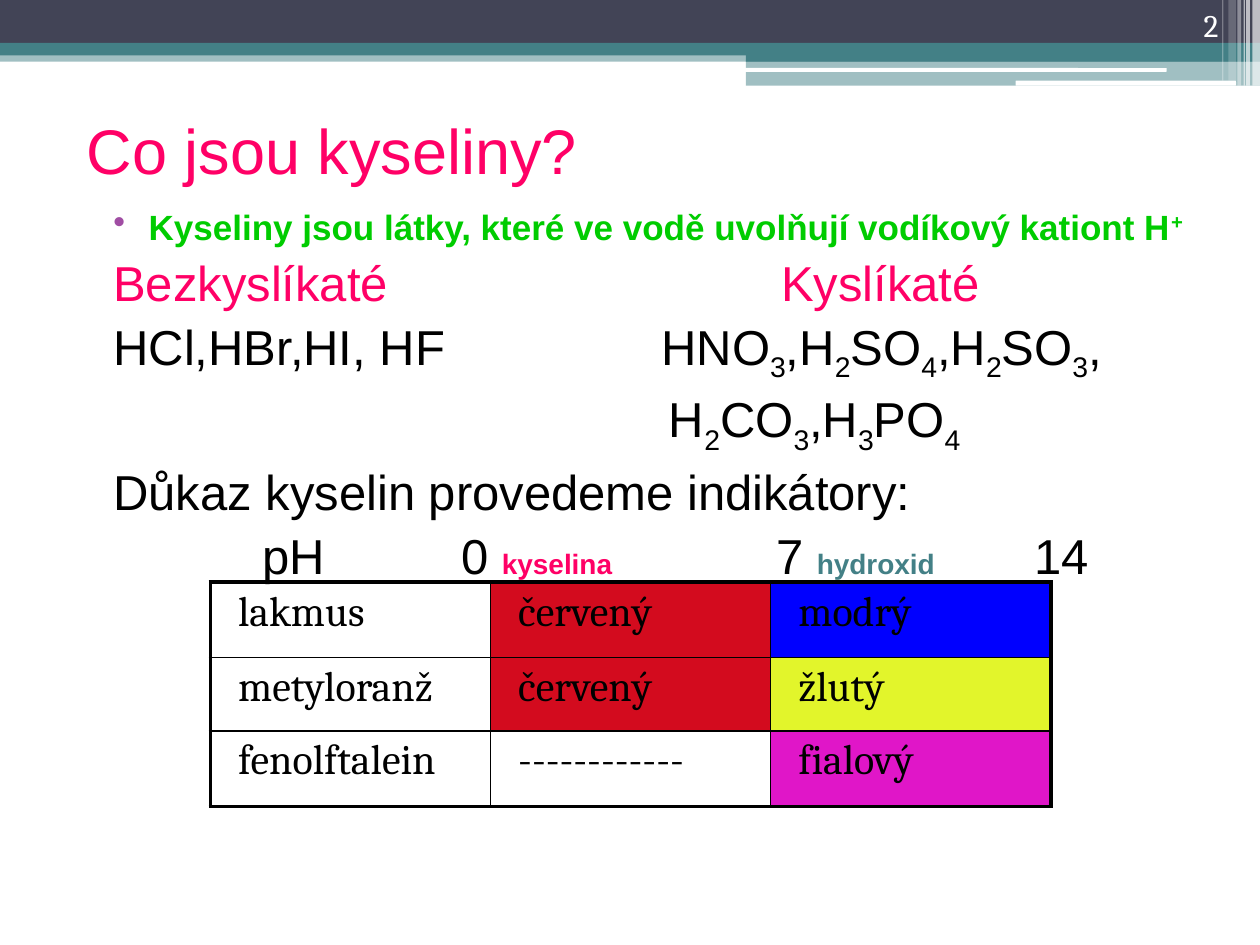
from dataclasses import dataclass
from itertools import groupby

from lxml.etree import SubElement
from pptx import Presentation
from pptx.dml.color import RGBColor
from pptx.enum.shapes import MSO_SHAPE
from pptx.enum.text import MSO_ANCHOR, PP_ALIGN
from pptx.oxml.ns import qn
from pptx.util import Inches, Pt

WHITE, BLACK = "FFFFFF", "000000"
NAVY, TEAL, PINK, GREEN, PURPLE = "424456", "438086", "FF0066", "00CC00", "A04DA3"
RED, BLUE, YELLOW, MAGENTA = "D30B1E", "0000FF", "E2F52B", "E016C8"


@dataclass
class Bar:
    left: float
    top: float
    width: float
    height: float
    color: str
    opacity: int = 100
    rounded: bool = False


@dataclass
class Cell:
    text: str
    fill: str | None = None


BARS = [
    Bar(0, 0.4, 10, 0.09, TEAL, 50),
    Bar(0, 0, 10, 0.34, NAVY),
    Bar(0, 0.34, 10, 0.1, TEAL),
    Bar(5.92, 0.39, 4.08, 0.1, TEAL),
    Bar(5.92, 0.48, 4.08, 0.2, TEAL, 50),
    Bar(5.91, 0.54, 3.35, 0.03, WHITE, rounded=True),
    Bar(8.06, 0.64, 1.75, 0.04, WHITE, rounded=True),
    Bar(9.94, 0, 0.06, 0.68, WHITE, 65),
    Bar(9.89, 0, 0.03, 0.68, WHITE, 65),
    Bar(9.87, 0, 0.01, 0.68, WHITE, 60),
    Bar(9.82, 0, 0.03, 0.68, WHITE, 40),
    Bar(9.75, 0, 0.06, 0.64, WHITE, 20),
    Bar(9.7, 0, 0.01, 0.64, WHITE, 30),
]
INDICATORS = [
    [Cell("lakmus"), Cell("červený", RED), Cell("modrý", BLUE)],
    [Cell("metyloranž"), Cell("červený", RED), Cell("žlutý", YELLOW)],
    [Cell("fenolftalein"), Cell("------------"), Cell("fialový", MAGENTA)],
]
ROW_HEIGHTS = [0.6, 0.58, 0.6]
COLUMN_WIDTH = 6.67 / 3


def rgb(color: str) -> RGBColor:
    return RGBColor.from_string(color)


def add_bar(s, bar: Bar) -> None:
    kind = MSO_SHAPE.ROUNDED_RECTANGLE if bar.rounded else MSO_SHAPE.RECTANGLE
    sp = s.shapes.add_shape(kind, *map(Inches, (bar.left, bar.top, bar.width, bar.height)))
    sp.shadow.inherit = False
    sp.line.fill.background()
    sp.fill.solid()
    sp.fill.fore_color.rgb = rgb(bar.color)
    if bar.opacity < 100:
        clr = next(sp.fill._xPr.iter(qn("a:srgbClr")))
        SubElement(clr, qn("a:alpha"), val=str(bar.opacity * 1000))


def add_box(s, left: float, top: float, width: float, height: float, anchor=MSO_ANCHOR.TOP):
    tf = s.shapes.add_textbox(*map(Inches, (left, top, width, height))).text_frame
    tf.word_wrap = True
    tf.vertical_anchor = anchor
    return tf


def add_run(p, text: str, *, size: float = 28, color: str = BLACK, font: str = "Arial",
            bold: bool = False, baseline: int = 0) -> None:
    r = p.add_run()
    r.text = text
    r.font.size = Pt(size)
    r.font.name = font
    r.font.bold = bold
    r.font.color.rgb = rgb(color)
    if baseline:
        r.font._element.set("baseline", str(baseline * 1000))


def add_formulas(p, text: str) -> None:
    """Write chemical formulas with their digits as subscripts."""
    for is_digit, chars in groupby(text, str.isdigit):
        add_run(p, "".join(chars), baseline=-25 if is_digit else 0)


def add_line(tf, *tabs: float):
    """Add a body paragraph with left tab stops in inches."""
    p = tf.add_paragraph()
    p.space_before = Pt(3)
    if tabs:
        stops = SubElement(p._p.get_or_add_pPr(), qn("a:tabLst"))
        for tab in tabs:
            SubElement(stops, qn("a:tab"), pos=str(Inches(tab)), algn="l")
    return p


def add_bullet(p, char: str, color: str, indent: float) -> None:
    pPr = p._p.get_or_add_pPr()
    pPr.set("marL", str(Inches(indent)))
    pPr.set("indent", str(-Inches(indent)))
    SubElement(SubElement(pPr, qn("a:buClr")), qn("a:srgbClr"), val=color)
    SubElement(pPr, qn("a:buChar"), char=char)


def set_borders(cell, widths: dict[str, float]) -> None:
    tcPr = cell._tc.get_or_add_tcPr()
    for i, (side, width) in enumerate(widths.items()):
        ln = tcPr.makeelement(qn(f"a:ln{side}"), {"w": str(Pt(width))})
        SubElement(SubElement(ln, qn("a:solidFill")), qn("a:srgbClr"), val=BLACK)
        tcPr.insert(i, ln)


def add_indicator_table(s) -> None:
    rows, cols = len(INDICATORS), len(INDICATORS[0])
    table = s.shapes.add_table(rows, cols, Inches(1.67), Inches(4.62),
                               Inches(COLUMN_WIDTH * cols), Inches(sum(ROW_HEIGHTS))).table
    table.first_row = table.horz_banding = False
    for column in table.columns:
        column.width = Inches(COLUMN_WIDTH)
    for i, items in enumerate(INDICATORS):
        table.rows[i].height = Inches(ROW_HEIGHTS[i])
        for j, item in enumerate(items):
            cell = table.cell(i, j)
            cell.margin_left = Inches(0.22)
            if item.fill:
                cell.fill.solid()
                cell.fill.fore_color.rgb = rgb(item.fill)
            else:
                cell.fill.background()
            add_run(cell.text_frame.paragraphs[0], item.text, size=24, font="Cambria")
            on_edge = {"L": j == 0, "R": j == cols - 1, "T": i == 0, "B": i == rows - 1}
            set_borders(cell, {side: 2.25 if edge else 1 for side, edge in on_edge.items()})


def add_body(s) -> None:
    tf = add_box(s, 0.7, 1.55, 9, 5.06)
    tf.margin_left = Inches(0.2)
    tf.margin_top = Inches(0.08)

    p = tf.paragraphs[0]
    add_bullet(p, "•", PURPLE, 0.28)
    definition = dict(size=20, color=GREEN, bold=True)
    add_run(p, "Kyseliny jsou látky, které ve vodě uvolňují vodíkový kationt H", **definition)
    add_run(p, "+", baseline=30, **definition)

    add_run(add_line(tf, 5.3), "Bezkyslíkaté\tKyslíkaté", color=PINK)
    add_formulas(add_line(tf, 4.35), "HCl,HBr,HI, HF\tHNO3,H2SO4,H2SO3,")
    add_formulas(add_line(tf, 4.41), "\tH2CO3,H3PO4")
    add_run(add_line(tf), "Důkaz kyselin provedeme indikátory:")

    p = add_line(tf, 1.18, 2.76, 5.26, 7.31)
    add_run(p, "\tpH\t0 ")
    add_run(p, "kyselina", size=16, color=PINK, bold=True)
    add_run(p, "\t7 ")
    add_run(p, "hydroxid", size=16, color=TEAL, bold=True)
    add_run(p, "\t14")


def main() -> None:
    prs = Presentation()
    prs.slide_width, prs.slide_height = Inches(10), Inches(7.5)
    s = prs.slides.add_slide(prs.slide_layouts[6])
    for bar in BARS:
        add_bar(s, bar)

    title = add_box(s, 0.59, 0.84, 9, 0.69, MSO_ANCHOR.MIDDLE)
    add_run(title.paragraphs[0], "Co jsou kyseliny?", size=36, color=PINK)
    add_body(s)

    number = add_box(s, 8.94, 0, 0.83, 0.4, MSO_ANCHOR.BOTTOM).paragraphs[0]
    number.alignment = PP_ALIGN.RIGHT
    add_run(number, "2", size=18, color=WHITE, font="Cambria")

    add_indicator_table(s)
    prs.save("out.pptx")


if __name__ == "__main__":
    main()
